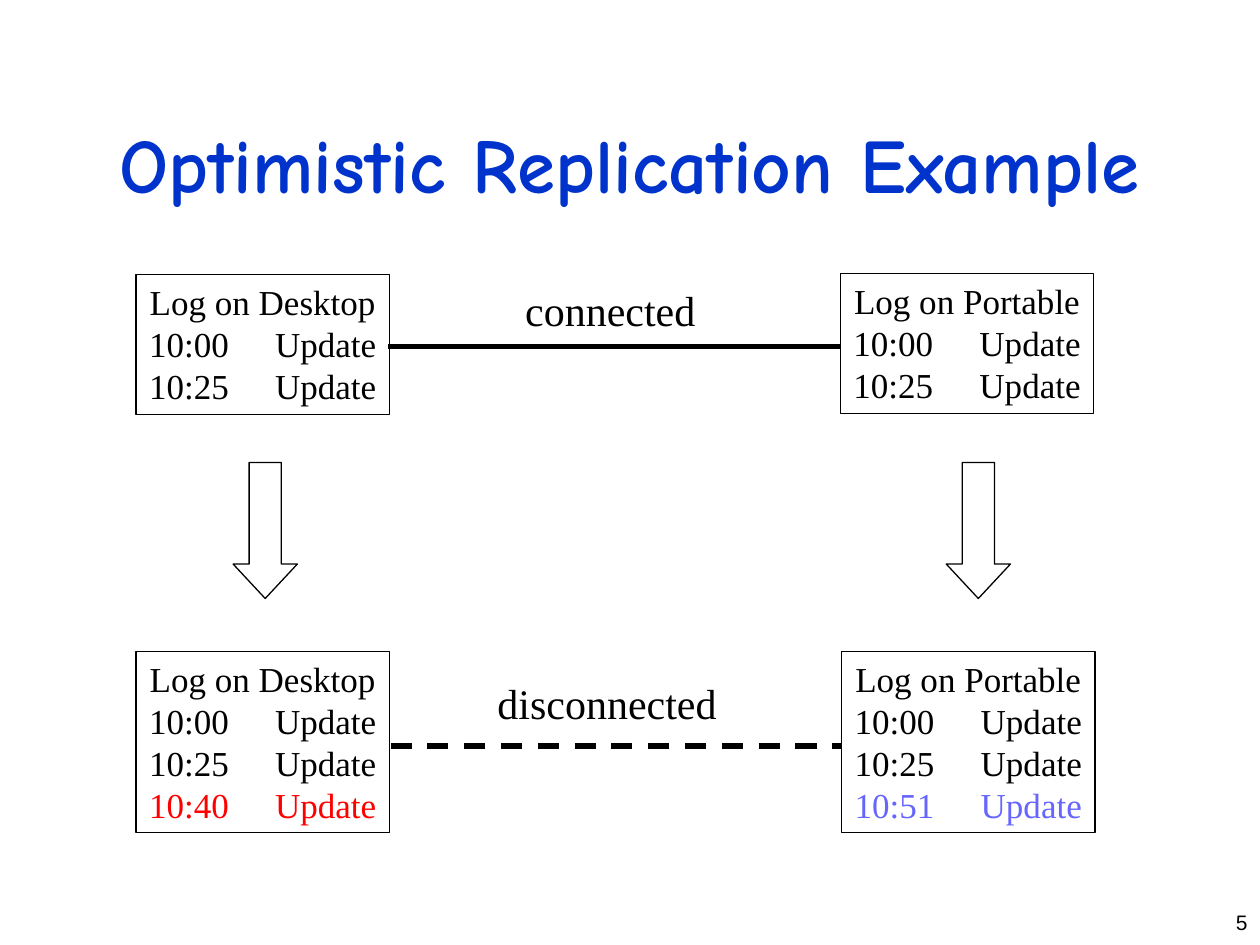
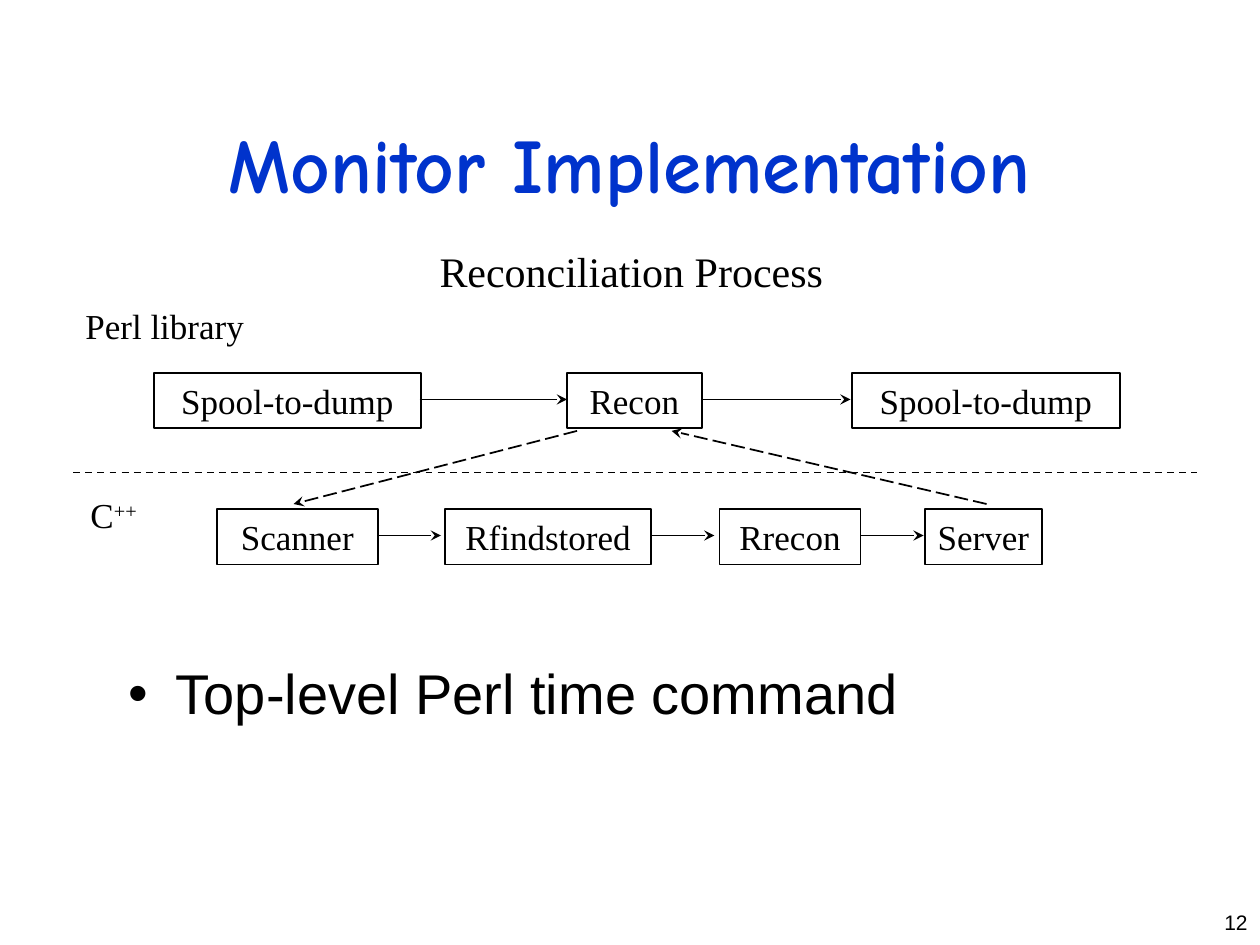
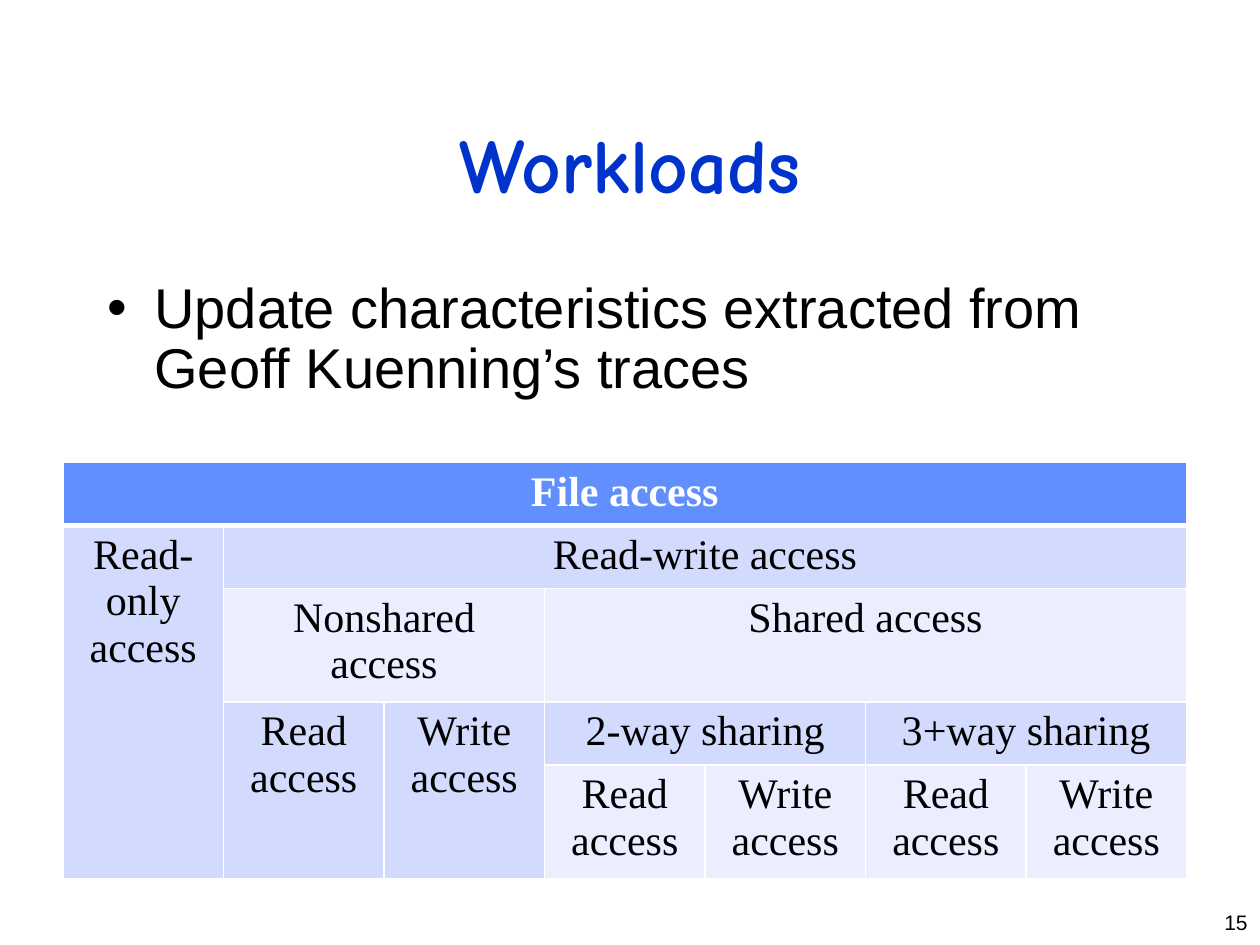
from lxml.etree import SubElement
from pptx import Presentation
from pptx.dml.color import RGBColor
from pptx.enum.dml import MSO_LINE as DASH
from pptx.enum.shapes import MSO_CONNECTOR as CONN, MSO_SHAPE as SHAPE
from pptx.enum.text import MSO_ANCHOR as ANCHOR, MSO_AUTO_SIZE as FIT, PP_ALIGN as ALIGN
from pptx.oxml.ns import qn
from pptx.util import Inches, Pt

BLACK = RGBColor(0x00, 0x00, 0x00)
WHITE = RGBColor(0xFF, 0xFF, 0xFF)
TITLE_BLUE = RGBColor(0x00, 0x33, 0xCC)
RED = RGBColor(0xFF, 0x00, 0x00)
VIOLET = RGBColor(0x66, 0x66, 0xFF)
HEADER_FILL = RGBColor(0x61, 0x8F, 0xFD)
DARK_BAND = RGBColor(0xD2, 0xDB, 0xFE)
LIGHT_BAND = RGBColor(0xEA, 0xEE, 0xFF)

TITLE_FONT = "Comic Neue"
BODY_FONT = "Arial"
DIAGRAM_FONT = "Times New Roman"
TITLE_ONLY, TITLE_AND_BODY = 5, 1


def add_run(p, text, font=DIAGRAM_FONT, size=20, color=BLACK, bold=False, baseline=None):
    """Add one formatted run to a paragraph."""
    r = p.add_run()
    r.text = text
    r.font.name = font
    r.font.size = Pt(size)
    r.font.color.rgb = color
    r.font.bold = bold
    if baseline:
        r.font._element.set("baseline", str(baseline * 1000))


def write(tf, *lines, align=ALIGN.LEFT, **fmt):
    """Fill a text frame; a line is a string or a list of (text, format) runs."""
    for i, line in enumerate(lines):
        p = tf.add_paragraph() if i else tf.paragraphs[0]
        p.alignment = align
        runs = [(line, {})] if isinstance(line, str) else line
        for text, own in runs:
            add_run(p, text, **{**fmt, **own})


def place(sp, x, y, w, h):
    """Move and size a shape, in inches."""
    sp.left, sp.top, sp.width, sp.height = map(Inches, (x, y, w, h))


def set_border(cell, side, width):
    """Draw a white border on one side of a table cell."""
    ln = SubElement(cell._tc.get_or_add_tcPr(), qn(f"a:ln{side}"), w=str(Pt(width)))
    fill = SubElement(ln, qn("a:solidFill"))
    SubElement(fill, qn("a:srgbClr"), val=str(WHITE))


class Deck:
    """Holds the presentation, its style and the current slide."""

    def __init__(self):
        self.prs = Presentation()
        self.prs.slide_width, self.prs.slide_height = Inches(10), Inches(7.5)
        self.s = None

    def slide(self, title, number, layout=TITLE_ONLY):
        """Start a slide with its title and page number."""
        self.s = self.prs.slides.add_slide(self.prs.slide_layouts[layout])
        sp = self.s.shapes.title
        place(sp, 0.75, 0.67, 8.5, 1.25)
        sp.text_frame.vertical_anchor = ANCHOR.MIDDLE
        write(sp.text_frame, title, align=ALIGN.CENTER, font=TITLE_FONT,
              size=44, color=TITLE_BLUE, bold=True)
        self.label(str(number), 9.25, 7.17, 0.75, 0.33, align=ALIGN.RIGHT,
                   wrap=True, font=BODY_FONT, size=12)

    def bullet(self, text, x, y, w, h):
        """Put a bullet in the body placeholder."""
        sp = self.s.placeholders[1]
        place(sp, x, y, w, h)
        tf = sp.text_frame
        tf.auto_size = FIT.NONE
        write(tf, text, font=BODY_FONT, size=32)
        tf.paragraphs[0].line_spacing = 0.9
        tf.paragraphs[0].space_before = Pt(0)

    def label(self, line, x, y, w, h, wrap=False, **fmt):
        """Add a line of free text."""
        tf = self.s.shapes.add_textbox(*map(Inches, (x, y, w, h))).text_frame
        tf.word_wrap = wrap
        write(tf, line, **fmt)

    def shape(self, kind, x, y, w, h, line=0.75):
        """Add an unfilled outlined shape."""
        sp = self.s.shapes.add_shape(kind, *map(Inches, (x, y, w, h)))
        sp.shadow.inherit = False
        sp.fill.background()
        sp.line.color.rgb = BLACK
        sp.line.width = Pt(line)
        return sp

    def box(self, lines, x, y, w, h, line=0.75):
        """Add an outlined box with centred lines of text."""
        tf = self.shape(SHAPE.RECTANGLE, x, y, w, h, line).text_frame
        tf.word_wrap = False
        tf.auto_size = FIT.SHAPE_TO_FIT_TEXT
        tf.vertical_anchor = ANCHOR.TOP
        write(tf, *lines, align=ALIGN.CENTER)

    def down_arrow(self, x, y, w, h):
        """Add a block arrow pointing down."""
        sp = self.shape(SHAPE.DOWN_ARROW, x, y, w, h)
        sp.adjustments[0], sp.adjustments[1] = 0.5, 0.536

    def line(self, x1, y1, x2, y2, width=1, dash=None, arrow=False):
        """Add a straight line, with an arrowhead at its end if asked."""
        c = self.s.shapes.add_connector(CONN.STRAIGHT, *map(Inches, (x1, y1, x2, y2)))
        c.line.color.rgb = BLACK
        c.line.width = Pt(width)
        if dash:
            c.line.dash_style = dash
        spPr = c._element.spPr
        if arrow:
            SubElement(spPr.find(qn("a:ln")), qn("a:tailEnd"), type="stealth")
        SubElement(spPr, qn("a:effectLst"))

    def table(self, x, y, w, h, rows, cols, fills, entries):
        """Add a table; an entry is (row, column, row span, column span, text)."""
        tbl = self.s.shapes.add_table(rows, cols, *map(Inches, (x, y, w, h))).table
        tbl.horz_banding = False
        for i in range(rows):
            for j in range(cols):
                for side in "LRTB":
                    under_header = (i, side) in ((0, "B"), (1, "T"))
                    set_border(tbl.cell(i, j), side, 3 if under_header else 1)
        for i, j, down, across, text in entries:
            cell = tbl.cell(i, j)
            if down * across > 1:
                cell.merge(tbl.cell(i + down - 1, j + across - 1))
            cell.fill.solid()
            cell.fill.fore_color.rgb = fills[i]
            header = i == 0
            write(cell.text_frame, text, align=ALIGN.CENTER, size=24,
                  color=WHITE if header else BLACK, bold=header)


def replication_slide(deck):
    """Two logs that diverge once disconnected."""
    deck.slide("Optimistic Replication Example", 5)
    shared = ["10:00\tUpdate", "10:25\tUpdate"]
    logs = [
        ("Log on Desktop", 1.08, 2.18, 1.08, 1.85, "10:40\tUpdate", RED),
        ("Log on Portable", 6.67, 2.17, 6.68, 7.51, "10:51\tUpdate", VIOLET),
    ]
    for name, x, y, later_x, arrow_x, update, color in logs:
        deck.box([name, *shared], x, y, 2.01, 1.11)
        deck.down_arrow(arrow_x, 3.67, 0.51, 1.08)
        deck.box([name, *shared, [(update, {"color": color})]], later_x, 5.17, 2.01, 1.44)
    deck.line(3.08, 2.75, 6.67, 2.75, width=3)
    deck.label("connected", 4.07, 2.21, 1.55, 0.5, size=24)
    deck.line(3.1, 5.92, 6.68, 5.92, width=3, dash=DASH.DASH)
    deck.label("disconnected", 3.85, 5.33, 1.94, 0.5, size=24)


def monitor_slide(deck):
    """The reconciliation process across two language layers."""
    deck.slide("Monitor Implementation", 12, TITLE_AND_BODY)
    deck.label("Reconciliation Process", 3.39, 1.9, 3.57, 0.5, size=24)
    deck.label("Perl library", 0.58, 2.37, 1.53, 0.43)
    deck.label([("C", {}), ("++", {"baseline": 30})], 0.62, 3.87, 0.6, 0.44)
    steps = {
        2.96: [("Spool-to-dump", 1.22, 2.12), ("Recon", 4.5, 1.07),
               ("Spool-to-dump", 6.76, 2.13)],
        4.04: [("Scanner", 1.72, 1.28), ("Rfindstored", 3.53, 1.64),
               ("Rrecon", 5.71, 1.12), ("Server", 7.34, 0.93)],
    }
    for y, row in steps.items():
        for name, x, w in row:
            deck.box([name], x, y, w, 0.44, line=1)
    flows = [(3.17, 1.17, (3.33, 5.58)), (4.25, 0.5, (3, 5.17, 6.83))]
    for y, length, starts in flows:
        for x in starts:
            deck.line(x, y, x + length, y, arrow=True)
    deck.line(4.58, 3.42, 2.33, 4, dash=DASH.LONG_DASH, arrow=True)
    deck.line(7.83, 4, 5.33, 3.42, dash=DASH.LONG_DASH, arrow=True)
    deck.line(0.58, 3.75, 9.5, 3.75, dash=DASH.DASH)
    deck.bullet("Top-level Perl time command", 0.92, 5.24, 8.5, 1.59)


def workloads_slide(deck):
    """The breakdown of file accesses."""
    deck.slide("Workloads", 15, TITLE_AND_BODY)
    deck.bullet("Update characteristics extracted from Geoff Kuenning’s traces",
                0.75, 2.17, 8.5, 4.5)
    modes = ["Read access", "Write access"]
    entries = [
        (0, 0, 1, 7, "File access"),
        (1, 0, 4, 1, "Read-only access"),
        (1, 1, 1, 6, "Read-write access"),
        (2, 1, 1, 2, "Nonshared access"),
        (2, 3, 1, 4, "Shared access"),
        *[(3, 1 + k, 2, 1, mode) for k, mode in enumerate(modes)],
        (3, 3, 1, 2, "2-way sharing"),
        (3, 5, 1, 2, "3+way sharing"),
        *[(4, 3 + k, 1, 1, mode) for k, mode in enumerate(modes * 2)],
    ]
    fills = [HEADER_FILL, DARK_BAND, LIGHT_BAND, DARK_BAND, LIGHT_BAND]
    deck.table(0.5, 3.67, 8.92, 2.05, 5, 7, fills, entries)


def main():
    """Build the three slides and save them."""
    deck = Deck()
    replication_slide(deck)
    monitor_slide(deck)
    workloads_slide(deck)
    deck.prs.save("out.pptx")


if __name__ == "__main__":
    main()
